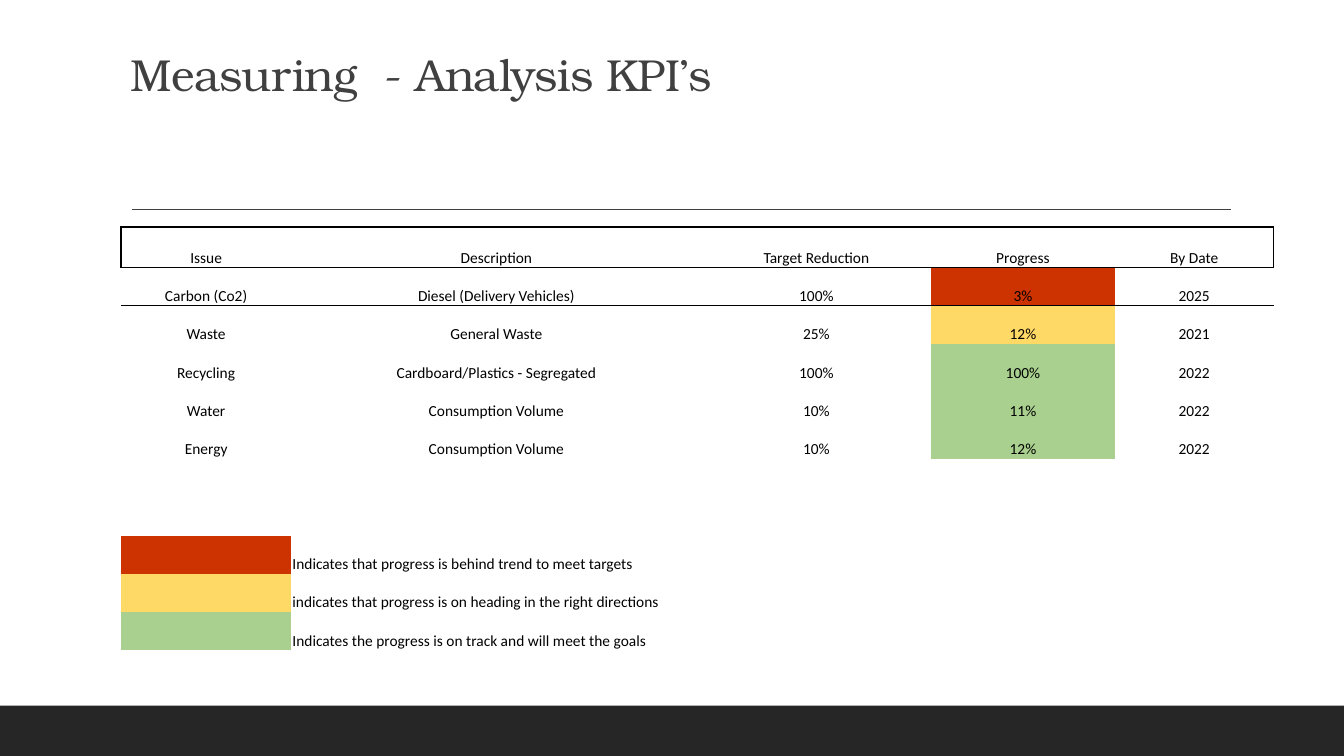
from dataclasses import dataclass

from lxml import etree
from pptx import Presentation, util as u
from pptx.dml.color import RGBColor
from pptx.enum import shapes, text
from pptx.oxml import ns

Cm, Pt = u.Cm, u.Pt


@dataclass(frozen=True)
class Theme:
    heading_font: str = "TeX Gyre Bonum"
    body_font: str = "Calibri"
    heading_size: int = 32
    body_size: int = 11
    heading: str = "404040"
    body: str = "000000"
    footer: str = "262626"
    behind: str = "CC3300"
    heading_there: str = "FFD966"
    on_track: str = "A9D08E"


T = Theme()
NO_GRID_STYLE = "{2D5ABB26-0587-4C30-8999-92F81FD0307C}"
COLUMN_WIDTHS = (4.29, 10.34, 5.79, 4.62, 4.01)
HEADER_HEIGHT = 1.02
TABLE_HEIGHT = 10.67
PROGRESS_COLUMN = 3
LEGEND_START = 8

HEADER = ("Issue", "Description", "Target Reduction", "Progress", "By Date")
KPIS = (
    ("Carbon (Co2)", "Diesel (Delivery Vehicles)", "100%", "3%", "2025", T.behind),
    ("Waste", "General Waste", "25%", "12%", "2021", T.heading_there),
    ("Recycling", "Cardboard/Plastics - Segregated", "100%", "100%", "2022", T.on_track),
    ("Water", "Consumption Volume", "10%", "11%", "2022", T.on_track),
    ("Energy", "Consumption Volume", "10%", "12%", "2022", T.on_track),
)
LEGEND = (
    (T.behind, "Indicates that progress is behind trend to meet targets"),
    (T.heading_there, "indicates that progress is on heading in the right directions"),
    (T.on_track, "Indicates the progress is on track and will meet the goals"),
)


def set_font(p, name, size, color):
    p.font.name = name
    p.font.size = Pt(size)
    p.font.color.rgb = RGBColor.from_string(color)


def add_title(s, title):
    tf = s.shapes.add_textbox(Cm(3.05), Cm(0.79), Cm(18.57), Cm(1.88)).text_frame
    tf.word_wrap = True
    tf.vertical_anchor = text.MSO_ANCHOR.BOTTOM
    p = tf.paragraphs[0]
    p.line_spacing = 0.9
    set_font(p, T.heading_font, T.heading_size, T.heading)
    r = p.add_run()
    r.text = title
    r.font.size = Pt(T.heading_size)
    r.font._element.set("spc", "-50")


def add_footer(s, width):
    sp = s.shapes.add_shape(shapes.MSO_SHAPE.RECTANGLE, 0, Cm(17.78), width, Cm(1.27))
    sp.shadow.inherit = False
    sp.fill.solid()
    sp.fill.fore_color.rgb = RGBColor.from_string(T.footer)
    sp.line.fill.background()


def add_rule(s):
    line = s.shapes.add_connector(
        shapes.MSO_CONNECTOR.STRAIGHT, Cm(3.33), Cm(5.28), Cm(31.01), Cm(5.28))
    line.line.color.rgb = RGBColor.from_string(T.heading)
    line.line.width = Pt(1)
    etree.SubElement(line._element.spPr, ns.qn("a:effectLst"))


def add_borders(cell, sides):
    """Draw the given sides, in the order L, R, T, B."""
    tc_pr = cell._tc.get_or_add_tcPr()
    for side in sides:
        ln = etree.SubElement(tc_pr, ns.qn(f"a:ln{side}"), w=str(Pt(1)))
        fill = etree.SubElement(ln, ns.qn("a:solidFill"))
        etree.SubElement(fill, ns.qn("a:srgbClr"), val=T.body)


def fill_cell(cell, color):
    cell.fill.solid()
    cell.fill.fore_color.rgb = RGBColor.from_string(color)


def write_cell(cell, words, align):
    cell.text = words
    p = cell.text_frame.paragraphs[0]
    p.alignment = align
    set_font(p, T.body_font, T.body_size, T.body)


def add_kpi_table(s):
    row_count = LEGEND_START + len(LEGEND)
    table = s.shapes.add_table(
        row_count, len(HEADER), Cm(3.05), Cm(5.72),
        Cm(sum(COLUMN_WIDTHS)), Cm(TABLE_HEIGHT)).table
    table.first_row = table.horz_banding = False
    table._tbl.tblPr.find(ns.qn("a:tableStyleId")).text = NO_GRID_STYLE

    # Grid
    for column, width in zip(table.columns, COLUMN_WIDTHS):
        column.width = Cm(width)
    for i, row in enumerate(table.rows):
        row.height = Cm(HEADER_HEIGHT if i == 0 else
                        (TABLE_HEIGHT - HEADER_HEIGHT) / (row_count - 1))
    for cell in table.iter_cells():
        cell.margin_left = cell.margin_right = cell.margin_top = Cm(0.03)
        cell.margin_bottom = 0
        cell.vertical_anchor = text.MSO_ANCHOR.BOTTOM

    # Box around the header
    last = len(HEADER) - 1
    for c in range(len(HEADER)):
        ends = ("L" if c == 0 else "") + ("R" if c == last else "")
        add_borders(table.cell(0, c), ends + "TB")
        add_borders(table.cell(1, c), "T")

    # Header and KPI rows
    for i, words in enumerate((HEADER, *(kpi[:-1] for kpi in KPIS))):
        for c, word in enumerate(words):
            write_cell(table.cell(i, c), word, text.PP_ALIGN.CENTER)
    for i, kpi in enumerate(KPIS, 1):
        fill_cell(table.cell(i, PROGRESS_COLUMN), kpi[-1])

    # Colour legend
    for i, (color, meaning) in enumerate(LEGEND, LEGEND_START):
        fill_cell(table.cell(i, 0), color)
        table.cell(i, 1).merge(table.cell(i, 3))
        write_cell(table.cell(i, 1), meaning, text.PP_ALIGN.LEFT)


def main():
    prs = Presentation()
    prs.slide_width, prs.slide_height = Cm(33.87), Cm(19.05)
    s = prs.slides.add_slide(prs.slide_layouts[6])
    add_footer(s, prs.slide_width)
    add_rule(s)
    add_title(s, "Measuring  - Analysis KPI’s")
    add_kpi_table(s)
    prs.save("out.pptx")


if __name__ == "__main__":
    main()
